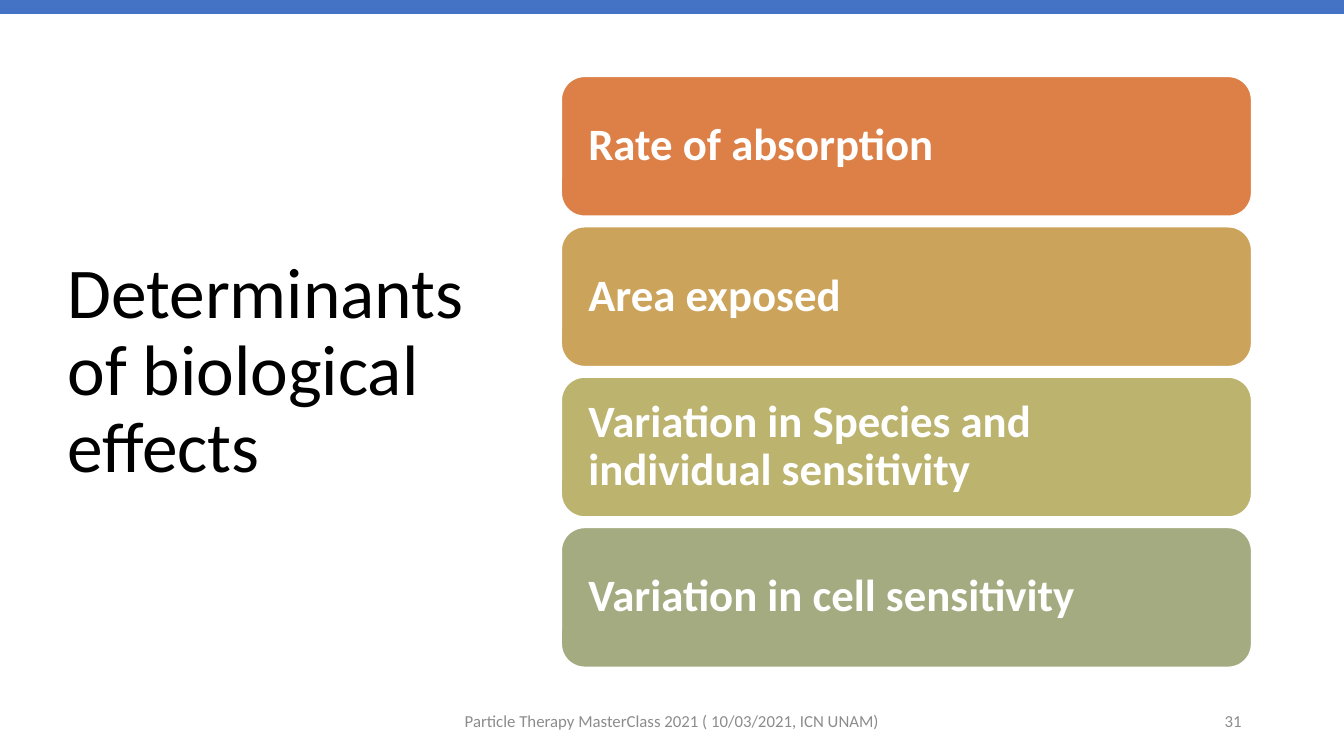
"""Builds the slide on the determinants of biological effects."""
from pptx import Presentation
from pptx.dml.color import RGBColor
from pptx.enum.shapes import MSO_SHAPE as Shape
from pptx.enum.text import MSO_ANCHOR as Anchor, MSO_AUTO_SIZE as AutoSize, PP_ALIGN as Align
from pptx.util import Pt

BLACK = RGBColor(0x00, 0x00, 0x00)
WHITE = RGBColor(0xFF, 0xFF, 0xFF)
GREY = RGBColor(0x8C, 0x8C, 0x8C)
BLUE = RGBColor(0x44, 0x72, 0xC4)
ORANGE = RGBColor(0xDD, 0x80, 0x47)
TAN = RGBColor(0xCC, 0xA3, 0x5B)
OLIVE = RGBColor(0xBB, 0xB3, 0x6E)
SAGE = RGBColor(0xA5, 0xAB, 0x81)


def write(box, text, size, color, bold=False, align=Align.LEFT, spacing=1.0, inset=7.2):
    frame = box.text_frame
    frame.word_wrap = True
    frame.auto_size = AutoSize.NONE
    frame.vertical_anchor = Anchor.MIDDLE
    frame.margin_left = frame.margin_right = Pt(inset)
    para = frame.paragraphs[0]
    para.alignment = align
    para.line_spacing = spacing
    span = para.add_run()
    span.text = text
    span.font.name = "Calibri"
    span.font.size = Pt(size)
    span.font.bold = bold
    span.font.color.rgb = color


deck = Presentation()
deck.slide_width, deck.slide_height = Pt(960), Pt(540)
page = deck.slides.add_slide(deck.slide_layouts[5])

title = page.shapes.title
title.left, title.top, title.width, title.height = Pt(41), Pt(49), Pt(299.5), Pt(433.5)
write(title, "Determinants of biological effects", 51, BLACK, spacing=0.9)

band = page.shapes.add_shape(Shape.RECTANGLE, Pt(0), Pt(0), Pt(960), Pt(10))
band.shadow.inherit = False
band.fill.solid()
band.fill.fore_color.rgb = BLUE
band.line.fill.background()

determinants = [
    ("Rate of absorption", ORANGE),
    ("Area exposed", TAN),
    ("Variation in Species and individual sensitivity", OLIVE),
    ("Variation in cell sensitivity", SAGE),
]
for row, (label, color) in enumerate(determinants):
    card = page.shapes.add_shape(
        Shape.ROUNDED_RECTANGLE, Pt(401), Pt(54.6 + 107.4 * row), Pt(493), Pt(99.8))
    card.shadow.inherit = False
    card.fill.solid()
    card.fill.fore_color.rgb = color
    card.line.color.rgb = WHITE
    card.line.width = Pt(1)
    write(card, label, 32, WHITE, bold=True, spacing=0.9, inset=14.4)

footers = [
    ("Particle Therapy MasterClass 2021 ( 10/03/2021, ICN UNAM)", 318, 324, Align.CENTER),
    ("31", 678, 216, Align.RIGHT),
]
for text, left, width, align in footers:
    footer = page.shapes.add_textbox(Pt(left), Pt(500.5), Pt(width), Pt(28.8))
    write(footer, text, 12, GREY, align=align)

deck.save("out.pptx")
